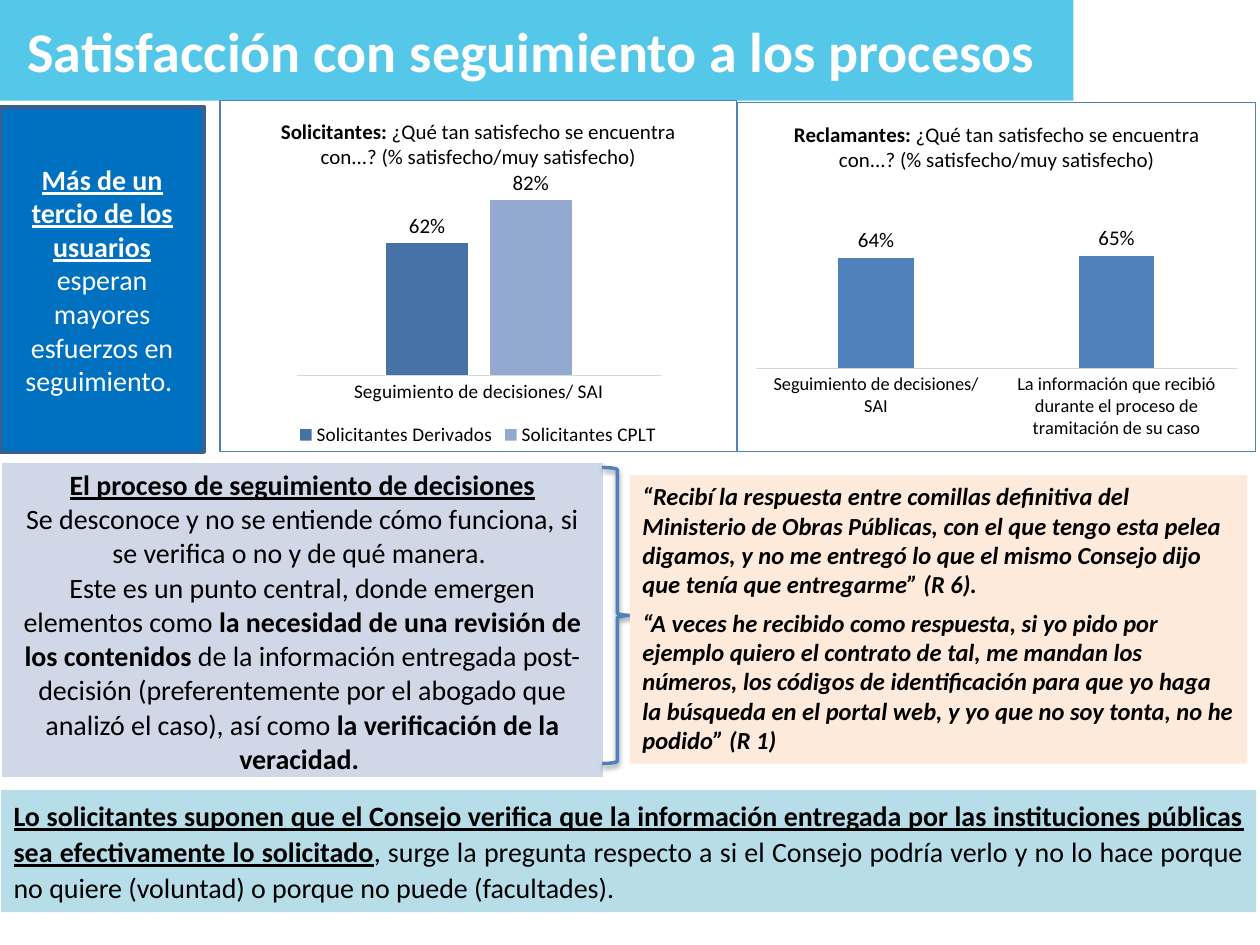
"""Build the slide on satisfaction with the follow-up of processes."""
import lxml.etree
import pptx
import pptx.chart.data
import pptx.dml.color
import pptx.enum.chart
import pptx.enum.shapes
import pptx.enum.text
import pptx.oxml
import pptx.util

PX = 9144
FONT = "Calibri"
RGB = pptx.dml.color.RGBColor
BLACK = RGB(0x00, 0x00, 0x00)
WHITE = RGB(0xFF, 0xFF, 0xFF)
SKY = RGB(0x55, 0xC8, 0xE9)
BLUE = RGB(0x4F, 0x81, 0xBD)
DARK_BLUE = RGB(0x46, 0x72, 0xA8)
PALE_BLUE = RGB(0x93, 0xA9, 0xCF)
STRONG_BLUE = RGB(0x00, 0x70, 0xC0)
EDGE_BLUE = RGB(0x3A, 0x5F, 0x8C)
LAVENDER = RGB(0xD0, 0xD8, 0xE8)
PEACH = RGB(0xFD, 0xEA, 0xDA)
AQUA = RGB(0xB7, 0xDE, 0xE8)
GREY = RGB(0xD9, 0xD9, 0xD9)
LEFT = pptx.enum.text.PP_ALIGN.LEFT
CENTER = pptx.enum.text.PP_ALIGN.CENTER
JUSTIFY = pptx.enum.text.PP_ALIGN.JUSTIFY
NS_A = 'xmlns:a="http://schemas.openxmlformats.org/drawingml/2006/main"'
NS_C = 'xmlns:c="http://schemas.openxmlformats.org/drawingml/2006/chart"'


def write(frame, paragraphs, size, color, align):
    """Fill a text frame; each span is a text and its styles out of b, i, u."""
    for index, spans in enumerate(paragraphs):
        para = frame.add_paragraph() if index else frame.paragraphs[0]
        para.alignment = align
        for text, style in spans:
            span = para.add_run()
            span.text = text
            span.font.name = FONT
            span.font.size = pptx.util.Pt(size)
            span.font.color.rgb = color
            span.font.bold = "b" in style
            span.font.italic = "i" in style
            span.font.underline = "u" in style


def add_panel(page, place, fill):
    """Add a plain filled rectangle with wrapped text at the top."""
    panel = page.shapes.add_shape(
        pptx.enum.shapes.MSO_SHAPE.RECTANGLE, *(value * PX for value in place))
    panel.shadow.inherit = False
    panel.fill.solid()
    panel.fill.fore_color.rgb = fill
    panel.line.fill.background()
    panel.text_frame.word_wrap = True
    panel.text_frame.vertical_anchor = pptx.enum.text.MSO_ANCHOR.TOP
    return panel


deck = pptx.Presentation()
deck.slide_width = 1000 * PX
deck.slide_height = 750 * PX
page = deck.slides.add_slide(deck.slide_layouts[6])

add_panel(page, (0, 0, 852, 80), SKY)
heading = page.shapes.add_textbox(12 * PX, 8 * PX, 827 * PX, 64 * PX)
heading.text_frame.word_wrap = False
heading.text_frame.auto_size = pptx.enum.text.MSO_AUTO_SIZE.SHAPE_TO_FIT_TEXT
write(heading.text_frame, [[("Satisfacción con seguimiento a los procesos", "b")]],
      32, WHITE, LEFT)

charts = [
    ("Solicitantes:", (174, 79, 411, 280), (0.149, 0.237, 0.705, 0.546), 0.9, 11,
     ["Seguimiento de decisiones/ SAI"],
     [("Solicitantes Derivados", [0.62], DARK_BLUE), ("Solicitantes CPLT", [0.82], PALE_BLUE)]),
    ("Reclamantes:", (585, 81, 412, 278), (0.035, 0.265, 0.929, 0.497), 1, 10.5,
     ["Seguimiento de decisiones/ SAI",
      "La información que recibió durante el proceso de tramitación de su caso"],
     [("Series 1", [0.64, 0.65], BLUE)]),
]
for group, place, plot_area, top, size, categories, series_list in charts:
    data = pptx.chart.data.CategoryChartData(number_format="0%")
    data.categories = categories
    for name, values, color in series_list:
        data.add_series(name, values)
    chart = page.shapes.add_chart(
        pptx.enum.chart.XL_CHART_TYPE.COLUMN_CLUSTERED,
        *(value * PX for value in place), data).chart
    chart.font.name = FONT
    chart.font.size = pptx.util.Pt(size)
    chart.font.color.rgb = BLACK
    chart.has_title = True
    question = " ¿Qué tan satisfecho se encuentra con...? (% satisfecho/muy satisfecho)"
    write(chart.chart_title.text_frame, [[(group, "b"), (question, "")]], 12, BLACK, CENTER)
    chart.has_legend = len(series_list) > 1
    if chart.has_legend:
        chart.legend.position = pptx.enum.chart.XL_LEGEND_POSITION.BOTTOM
        chart.legend.include_in_layout = False
        chart.legend.font.name = FONT
        chart.legend.font.size = pptx.util.Pt(size)
        chart.legend.font.color.rgb = BLACK

    chart.value_axis.minimum_scale = 0
    chart.value_axis.maximum_scale = top
    chart.value_axis.has_major_gridlines = False
    chart.value_axis.visible = False
    axis = chart.category_axis
    axis.major_tick_mark = pptx.enum.chart.XL_TICK_MARK.NONE
    axis.tick_labels.font.name = FONT
    axis.tick_labels.font.size = pptx.util.Pt(size)
    axis.tick_labels.font.color.rgb = BLACK
    axis.format.line.color.rgb = GREY
    axis.format.line.width = pptx.util.Pt(0.75)

    plot = chart.plots[0]
    plot.vary_by_categories = False
    plot.gap_width = 219
    plot.overlap = -27
    for series, (name, values, color) in zip(plot.series, series_list):
        series.format.fill.solid()
        series.format.fill.fore_color.rgb = color
        labels = series.data_labels
        labels.show_value = True
        labels.number_format = "0%"
        labels.number_format_is_linked = False
        labels.position = pptx.enum.chart.XL_LABEL_POSITION.OUTSIDE_END
        labels.font.name = FONT
        labels.font.size = pptx.util.Pt(12)
        labels.font.color.rgb = BLACK

    area = chart._chartSpace.chart.plotArea
    for layout in area.findall("{*}layout"):
        area.remove(layout)
    sides = "".join(f'<c:{side} val="{value}"/>' for side, value in zip("xywh", plot_area))
    area.insert(0, pptx.oxml.parse_xml(
        f'<c:layout {NS_C}><c:manualLayout><c:layoutTarget val="inner"/>'
        f'<c:xMode val="edge"/><c:yMode val="edge"/>{sides}</c:manualLayout></c:layout>'))
    chart._chartSpace.chart.addnext(pptx.oxml.parse_xml(
        f'<c:spPr {NS_C} {NS_A}><a:solidFill><a:srgbClr val="{WHITE}"/></a:solidFill>'
        f'<a:ln w="9525"><a:solidFill><a:srgbClr val="{BLUE}"/></a:solidFill></a:ln></c:spPr>'))

table = page.shapes.add_table(1, 1, 1 * PX, 367 * PX, 478 * PX, 237 * PX).table
table.first_row = False
table.horz_banding = False
cell = table.cell(0, 0)
cell.fill.solid()
cell.fill.fore_color.rgb = LAVENDER
write(cell.text_frame, [
    [("El proceso de seguimiento de decisiones", "bu")],
    [("Se desconoce y no se entiende cómo funciona, si se verifica o no y de qué manera. ", "")],
    [("Este es un punto central, donde emergen elementos como ", ""),
     ("la necesidad de una revisión de los contenidos ", "b"),
     ("de la información entregada post-decisión (preferentemente por el abogado que "
      "analizó el caso), así como ", ""),
     ("la verificación de la veracidad. ", "b")],
], 16, BLACK, CENTER)
for index, side in enumerate("LRTB"):
    cell._tc.tcPr.insert(index, pptx.oxml.parse_xml(
        f'<a:ln{side} {NS_A} w="12700"><a:solidFill><a:srgbClr val="{WHITE}"/>'
        f'</a:solidFill></a:ln{side}>'))

brace = page.shapes.add_shape(
    pptx.enum.shapes.MSO_SHAPE.RIGHT_BRACE, 478 * PX, 371 * PX, 24 * PX, 235 * PX)
brace.fill.background()
brace.line.color.rgb = BLUE
brace.line.width = pptx.util.Pt(2)
brace.shadow.inherit = False
brace._element.spPr.find("{*}effectLst").append(pptx.oxml.parse_xml(
    f'<a:outerShdw {NS_A} blurRad="39370" dist="20320" dir="5400000" rotWithShape="0">'
    f'<a:srgbClr val="{BLACK}"><a:alpha val="38000"/></a:srgbClr></a:outerShdw>'))

quotes = add_panel(page, (500, 377, 490, 229), PEACH)
write(quotes.text_frame, [
    [("“Recibí la respuesta entre comillas definitiva del Ministerio de Obras Públicas, con el "
      "que tengo esta pelea digamos, y no me entregó lo que el mismo Consejo dijo que tenía "
      "que entregarme” (R 6).", "bi")],
    [("“A veces he recibido como respuesta, si yo pido por ejemplo quiero el contrato de tal, "
      "me mandan los números, los códigos de identificación para que yo haga la búsqueda en "
      "el portal web, y yo que no soy tonta, no he podido” (R 1)", "bi")],
], 14, BLACK, LEFT)
quotes.text_frame.paragraphs[1].space_before = pptx.util.Pt(5)

conclusion = add_panel(page, (1, 627, 996, 97), AQUA)
write(conclusion.text_frame, [[
    ("Lo solicitantes suponen que el Consejo verifica que la información entregada por las "
     "instituciones públicas sea efectivamente lo solicitado", "bu"),
    (", surge la pregunta respecto a si el Consejo podría verlo y no lo hace porque no quiere "
     "(voluntad) o porque no puede (facultades).", ""),
]], 16, BLACK, JUSTIFY)
conclusion.text_frame.paragraphs[0].line_spacing = 1.07

callout = add_panel(page, (0, 85, 162, 274), STRONG_BLUE)
callout.line.color.rgb = EDGE_BLUE
callout.line.width = pptx.util.Pt(2)
callout.text_frame.vertical_anchor = pptx.enum.text.MSO_ANCHOR.MIDDLE
write(callout.text_frame, [[
    ("Más de un tercio de los usuarios ", "bu"),
    ("esperan mayores esfuerzos en seguimiento. ", ""),
]], 16, WHITE, CENTER)

deck.save("out.pptx")
